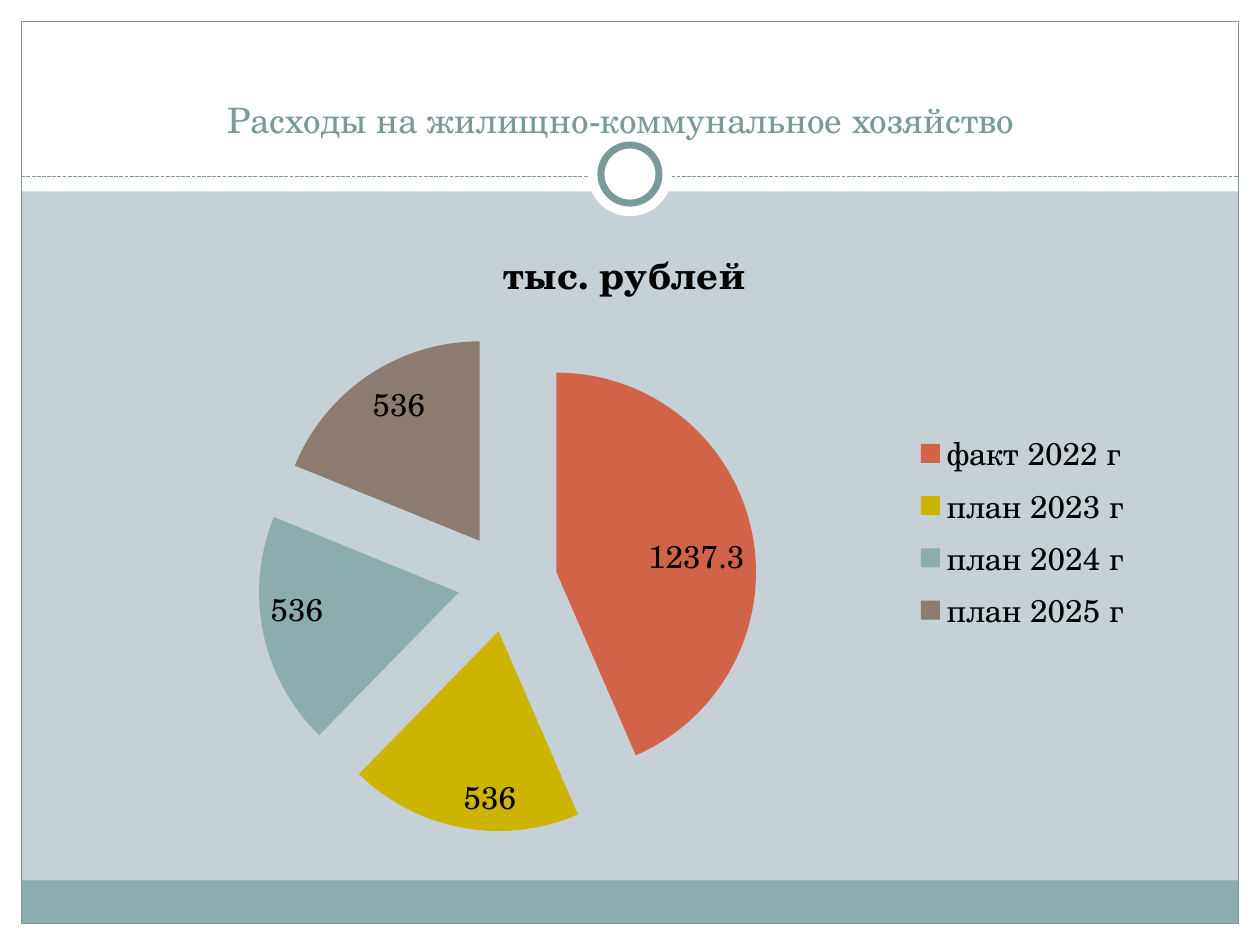
from lxml.etree import SubElement
from pptx import Presentation
from pptx.chart.data import CategoryChartData
from pptx.dml.color import RGBColor
from pptx.enum.chart import XL_CHART_TYPE, XL_LABEL_POSITION, XL_LEGEND_POSITION
from pptx.enum.dml import MSO_LINE
from pptx.enum.shapes import MSO_CONNECTOR, MSO_SHAPE
from pptx.enum.text import MSO_ANCHOR, PP_ALIGN
from pptx.oxml.ns import qn
from pptx.util import Cm, Pt

WIDTH, HEIGHT = 25.4, 19.05
MARGIN = 0.43
WHITE, TEAL, DARK_TEAL, BLUE_GREY, BLACK = "FFFFFF", "8CADAE", "7C999A", "C5D1D7", "000000"


def colour(hex_value):
    return RGBColor.from_string(hex_value)


class SlideBuilder:
    font_name = "TeX Gyre Schola"

    def __init__(self, page, background):
        self.page = page
        page.background.fill.solid()
        page.background.fill.fore_color.rgb = colour(background)

    def set_font(self, font, size, hex_value, bold=False):
        font.name = self.font_name
        font.size = Pt(size)
        font.bold = bold
        font.color.rgb = colour(hex_value)

    def shape(self, kind, left, top, width, height, fill=None, line=None, weight=0.75):
        shape = self.page.shapes.add_shape(kind, Cm(left), Cm(top), Cm(width), Cm(height))
        shape.shadow.inherit = False
        if fill:
            shape.fill.solid()
            shape.fill.fore_color.rgb = colour(fill)
        else:
            shape.fill.background()
        if line:
            shape.line.color.rgb = colour(line)
            shape.line.width = Pt(weight)
        else:
            shape.line.fill.background()

    def rectangle(self, *bounds, **style):
        self.shape(MSO_SHAPE.RECTANGLE, *bounds, **style)

    def circle(self, center_x, center_y, diameter, **style):
        radius = diameter / 2
        self.shape(MSO_SHAPE.OVAL, center_x - radius, center_y - radius, diameter, diameter, **style)

    def dashed_line(self, left, right, top, hex_value):
        line = self.page.shapes.add_connector(
            MSO_CONNECTOR.STRAIGHT, Cm(left), Cm(top), Cm(right), Cm(top))
        line.line.color.rgb = colour(hex_value)
        line.line.width = Pt(0.75)
        line.line.dash_style = MSO_LINE.SQUARE_DOT
        SubElement(line._element.spPr, qn("a:effectLst"))

    def title(self, text, left, top, width, height):
        box = self.page.shapes.add_textbox(Cm(left), Cm(top), Cm(width), Cm(height))
        frame = box.text_frame
        frame.word_wrap = True
        frame.vertical_anchor = MSO_ANCHOR.BOTTOM
        para = frame.paragraphs[0]
        para.text = text
        para.alignment = PP_ALIGN.CENTER
        self.set_font(para.font, 20, DARK_TEAL)

    def pie(self, name, slices, explosion, left, top, width, height):
        data = CategoryChartData()
        data.categories = [category for category, _, _ in slices]
        data.add_series(name, [value for _, value, _ in slices])
        chart = self.page.shapes.add_chart(
            XL_CHART_TYPE.PIE, Cm(left), Cm(top), Cm(width), Cm(height), data).chart
        self.set_font(chart.font, 18, BLACK)

        chart.has_title = True
        para = chart.chart_title.text_frame.paragraphs[0]
        para.text = name
        self.set_font(para.font, 21.6, BLACK, bold=True)
        chart.chart_title.include_in_layout = False

        chart.has_legend = True
        chart.legend.position = XL_LEGEND_POSITION.RIGHT
        chart.legend.include_in_layout = False
        self.set_font(chart.legend.font, 18, BLACK)

        plot = chart.plots[0]
        plot.vary_by_categories = True
        series = plot.series[0]
        for index, (_, _, fill) in enumerate(slices):
            point_fill = series.points[index].format.fill
            point_fill.solid()
            point_fill.fore_color.rgb = colour(fill)
        exploded = SubElement(series._element, qn("c:explosion"), val=str(explosion))
        series._element.find(qn("c:dPt")).addprevious(exploded)

        labels = series.data_labels
        labels.show_value = True
        labels.number_format = "General"
        labels.number_format_is_linked = False
        labels.position = XL_LABEL_POSITION.INSIDE_END
        self.set_font(labels.font, 18, BLACK)


def main():
    deck = Presentation()
    deck.slide_width, deck.slide_height = Cm(WIDTH), Cm(HEIGHT)
    builder = SlideBuilder(deck.slides.add_slide(deck.slide_layouts[6]), BLUE_GREY)

    inner_width, inner_height = WIDTH - 2 * MARGIN, HEIGHT - 2 * MARGIN
    footer_height = 0.87
    for bounds in (
        (0, HEIGHT - MARGIN, WIDTH, MARGIN),
        (0, 0, WIDTH, 3.86),
        (0, 0, MARGIN, HEIGHT),
        (WIDTH - MARGIN, 0, MARGIN, HEIGHT),
    ):
        builder.rectangle(*bounds, fill=WHITE)
    builder.rectangle(MARGIN, HEIGHT - MARGIN - footer_height, inner_width, footer_height, fill=TEAL)
    builder.rectangle(MARGIN, MARGIN, inner_width, inner_height, line=DARK_TEAL)
    builder.dashed_line(MARGIN, WIDTH - MARGIN, 3.56, DARK_TEAL)
    builder.circle(WIDTH / 2, 3.51, 1.7, fill=WHITE)
    builder.circle(WIDTH / 2, 3.51, 1.17, fill=WHITE, line=DARK_TEAL, weight=4)

    builder.title("Расходы на жилищно-коммунальное хозяйство", 3.1, 1.12, 18.85, 1.83)
    slices = [
        ("факт 2022 г", 1237.3, "D16349"),
        ("план 2023 г", 536, "CCB400"),
        ("план 2024 г", 536, "8CADAE"),
        ("план 2025 г", 536, "8C7B70"),
    ]
    builder.pie("тыс. рублей", slices, 25, 2.11, 4.32, 20.96, 12.8)
    deck.save("out.pptx")


if __name__ == "__main__":
    main()
